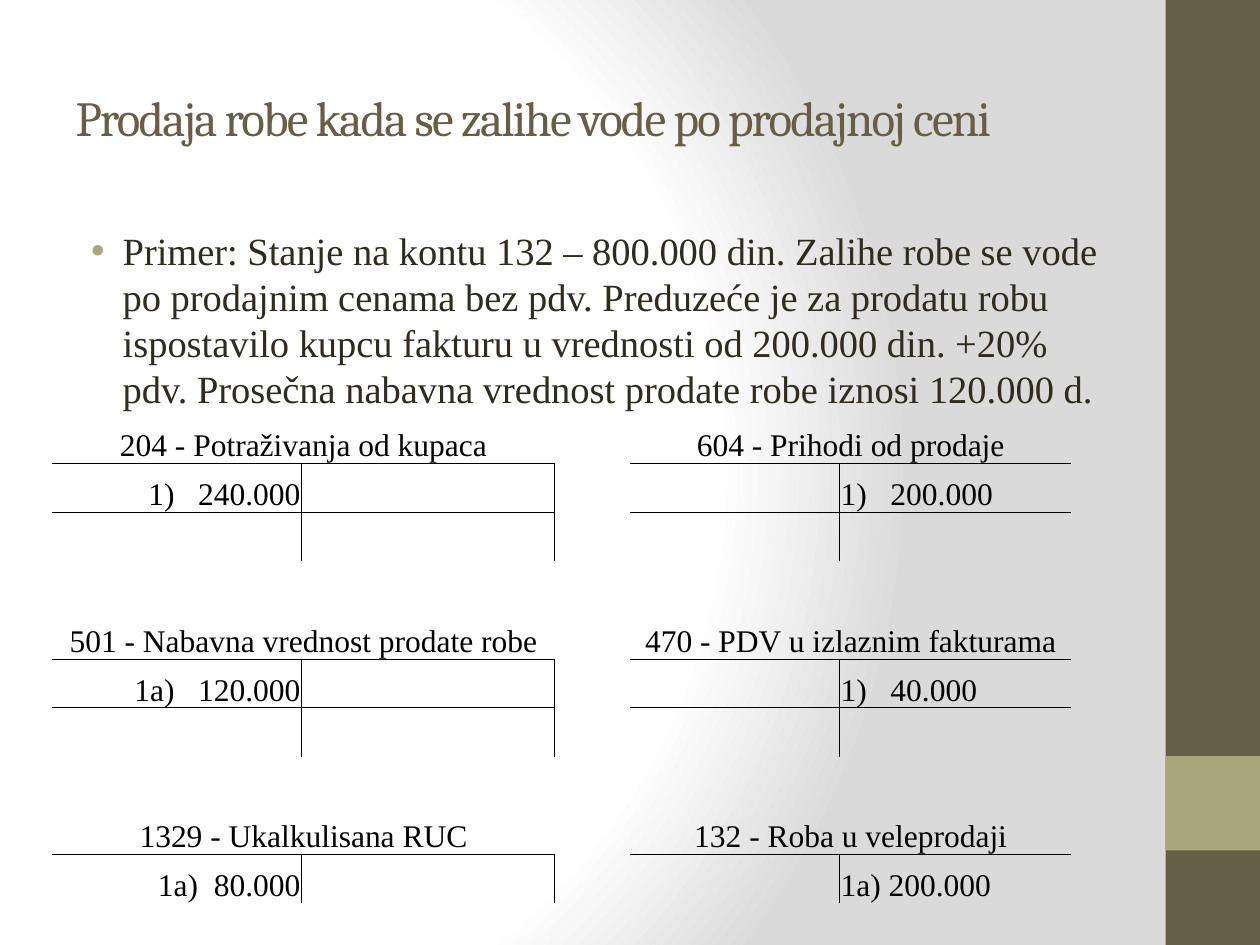
import lxml.etree
import pptx
import pptx.dml.color
import pptx.enum.shapes
import pptx.enum.text
import pptx.oxml
import pptx.oxml.ns
import pptx.util

Pt = pptx.util.Pt
qn = pptx.oxml.ns.qn
ALIGN = pptx.enum.text.PP_ALIGN
ANCHOR = pptx.enum.text.MSO_ANCHOR
DRAWING = 'xmlns:a="http://schemas.openxmlformats.org/drawingml/2006/main"'
PLAIN_TABLE_STYLE = "{2D5ABB26-0587-4C30-8999-92F81FD0307C}"
COLORS = {
    "brown": "675E47", "olive": "A9A57C", "body": "2F2B20",
    "black": "000000", "white": "FFFFFF", "grey": "DADADA",
}

TITLE = "Prodaja robe kada se zalihe vode po prodajnoj ceni"
EXAMPLE = (
    "Primer: Stanje na kontu 132 – 800.000 din. Zalihe robe se vode po prodajnim "
    "cenama bez pdv. Preduzeće je za prodatu robu ispostavilo kupcu fakturu u "
    "vrednosti od 200.000 din. +20% pdv. Prosečna nabavna vrednost prodate robe "
    "iznosi 120.000 d."
)
# Top row, left column, account name, debit entry, credit entry
ACCOUNTS = [
    (0, 0, "204 - Potraživanja od kupaca", "1)   240.000", ""),
    (0, 3, "604 - Prihodi od prodaje", "", "1)   200.000"),
    (4, 0, "501 - Nabavna vrednost prodate robe", "1a)   120.000", ""),
    (4, 3, "470 - PDV u izlaznim fakturama", "", "1)   40.000"),
    (8, 0, "1329 - Ukalkulisana RUC", "1a)  80.000", ""),
    (8, 3, "132 - Roba u veleprodaji", "", "1a) 200.000"),
]
COLUMN_WIDTHS = [142.5, 144.5, 43.2, 119.5, 132.5]
ROW_HEIGHTS = [31] + [27.9] * 9


class SlideBuilder:
    heading_font = "Cambria"
    text_font = "Times New Roman"

    def __init__(self, slide):
        self.slide = slide

    def color(self, name):
        return pptx.dml.color.RGBColor.from_string(COLORS[name])

    def format_text(self, paragraph, font, size, color):
        for run in paragraph.runs:
            run.font.name = font
            run.font.size = Pt(size)
            run.font.color.rgb = self.color(color)

    def background(self, stops, focus):
        """Fill with a circular gradient around the focus (left, top, right, bottom in %)."""
        self.slide.background.fill.gradient()
        gradient = self.slide.element.find(".//" + qn("a:gradFill"))
        for child in list(gradient):
            gradient.remove(child)
        stop_list = lxml.etree.SubElement(gradient, qn("a:gsLst"))
        for position, color in stops:
            stop = lxml.etree.SubElement(stop_list, qn("a:gs"), pos=str(position * 1000))
            lxml.etree.SubElement(stop, qn("a:srgbClr"), val=COLORS[color])
        circle = lxml.etree.SubElement(gradient, qn("a:path"))
        circle.set("path", "circle")
        sides = {side: str(value * 1000) for side, value in zip("ltrb", focus)}
        lxml.etree.SubElement(circle, qn("a:fillToRect"), **sides)

    def rectangle(self, left, top, width, height, color):
        shape = self.slide.shapes.add_shape(
            pptx.enum.shapes.MSO_SHAPE.RECTANGLE, Pt(left), Pt(top), Pt(width), Pt(height))
        shape.shadow.inherit = False
        shape.fill.solid()
        shape.fill.fore_color.rgb = self.color(color)
        shape.line.fill.background()

    def title(self, text, left, top, width, height):
        shape = self.slide.shapes.title
        shape.left, shape.top = Pt(left), Pt(top)
        shape.width, shape.height = Pt(width), Pt(height)
        frame = shape.text_frame
        frame.text = text
        frame.vertical_anchor = ANCHOR.MIDDLE
        paragraph = frame.paragraphs[0]
        paragraph.alignment = ALIGN.LEFT
        self.format_text(paragraph, self.heading_font, 28, "brown")
        paragraph.runs[0].font._element.set("spc", "-100")

    def bullet_text(self, text, left, top, width, height):
        frame = self.slide.shapes.add_textbox(
            Pt(left), Pt(top), Pt(width), Pt(height)).text_frame
        frame.word_wrap = True
        frame.text = text
        paragraph = frame.paragraphs[0]
        paragraph.space_before = Pt(4.4)
        self.format_text(paragraph, self.text_font, 22, "body")
        properties = paragraph._p.get_or_add_pPr()
        properties.set("marL", str(Pt(27)))
        properties.set("indent", str(Pt(-18)))
        bullet_color = lxml.etree.SubElement(properties, qn("a:buClr"))
        lxml.etree.SubElement(bullet_color, qn("a:srgbClr"), val=COLORS["olive"])
        lxml.etree.SubElement(properties, qn("a:buFont"), typeface="Arial")
        lxml.etree.SubElement(properties, qn("a:buChar"), char="•")

    def table(self, left, top, widths, heights):
        """Add an empty table without borders or fills."""
        table = self.slide.shapes.add_table(
            len(heights), len(widths), Pt(left), Pt(top),
            Pt(sum(widths)), Pt(sum(heights))).table
        table.first_row = table.horz_banding = False
        table._tbl.tblPr.find(qn("a:tableStyleId")).text = PLAIN_TABLE_STYLE
        for column, width in zip(table.columns, widths):
            column.width = Pt(width)
        for row, height in zip(table.rows, heights):
            row.height = Pt(height)
        for cell in table.iter_cells():
            cell.margin_left = cell.margin_right = cell.margin_top = Pt(0.75)
            cell.margin_bottom = 0
            cell.vertical_anchor = ANCHOR.BOTTOM
            cell.fill.background()
        return table

    def cell_text(self, cell, text, alignment):
        cell.text = text
        paragraph = cell.text_frame.paragraphs[0]
        paragraph.alignment = alignment
        self.format_text(paragraph, self.text_font, 18, "black")

    def cell_borders(self, cell, sides):
        """Draw borders on the sides, named in the order L, R, T, B."""
        properties = cell._tc.get_or_add_tcPr()
        for index, side in enumerate(sides):
            properties.insert(index, pptx.oxml.parse_xml(
                f'<a:ln{side} {DRAWING} w="{Pt(0.5)}"><a:solidFill>'
                f'<a:srgbClr val="{COLORS["black"]}"/></a:solidFill></a:ln{side}>'))

    def t_account(self, table, top, left, name, debit, credit):
        heading = table.cell(top, left)
        heading.merge(table.cell(top, left + 1))
        self.cell_text(heading, name, ALIGN.CENTER)
        self.cell_text(table.cell(top + 1, left), debit, ALIGN.RIGHT)
        self.cell_text(table.cell(top + 1, left + 1), credit, ALIGN.LEFT)
        last_row = min(top + 2, len(table.rows) - 1)
        for column, inner_side in ((left, "R"), (left + 1, "L")):
            self.cell_borders(table.cell(top, column), "B")
            for row in range(top + 1, last_row + 1):
                sides = inner_side + ("T" if row == top + 1 else "")
                self.cell_borders(table.cell(row, column), sides)


def main():
    presentation = pptx.Presentation()
    presentation.slide_width, presentation.slide_height = Pt(720), Pt(540)
    builder = SlideBuilder(presentation.slides.add_slide(presentation.slide_layouts[5]))
    builder.background([(0, "white"), (75, "white"), (100, "grey")], (20, 50, 100, 50))
    builder.rectangle(666, 0, 54, 540, "brown")
    builder.rectangle(666, 432, 54, 54, "olive")
    builder.title(TITLE, 36, 21.6, 600, 90)
    builder.bullet_text(EXAMPLE, 36, 126, 600, 378)
    table = builder.table(30, 234, COLUMN_WIDTHS, ROW_HEIGHTS)
    for account in ACCOUNTS:
        builder.t_account(table, *account)
    presentation.save("out.pptx")


if __name__ == "__main__":
    main()
